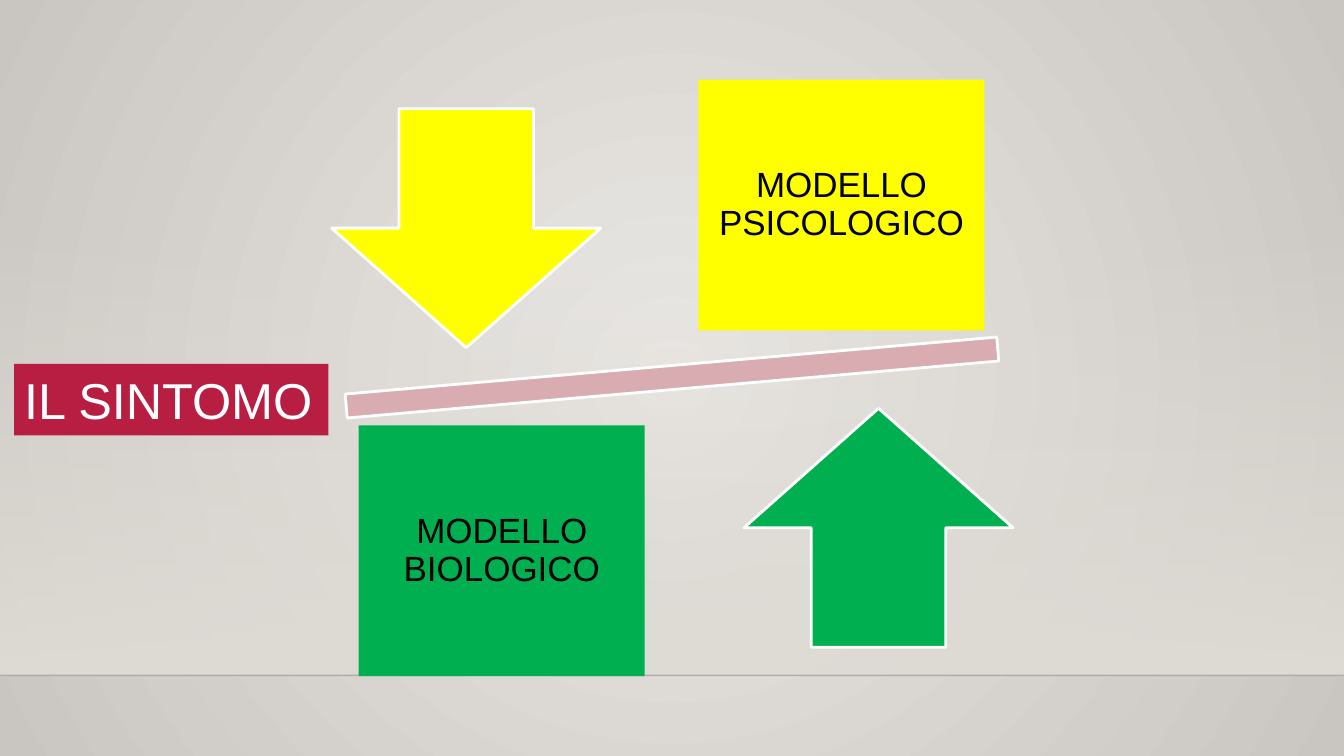
import pptx
import pptx.dml.color
import pptx.enum.shapes
import pptx.enum.text
import pptx.oxml.ns
import pptx.util
from lxml import etree

Cm = pptx.util.Cm
Pt = pptx.util.Pt
RGBColor = pptx.dml.color.RGBColor
Kind = pptx.enum.shapes.MSO_SHAPE
Align = pptx.enum.text.PP_ALIGN
qn = pptx.oxml.ns.qn

BLACK = RGBColor(0x00, 0x00, 0x00)
WHITE = RGBColor(0xFF, 0xFF, 0xFF)
YELLOW = RGBColor(0xFF, 0xFF, 0x00)
GREEN = RGBColor(0x00, 0xB0, 0x50)
RED = RGBColor(0xB7, 0x1E, 0x42)
PINK = RGBColor(0xD8, 0xAC, 0xB0)
LIGHT = RGBColor(0xEB, 0xE9, 0xE6)
DARK = RGBColor(0xC9, 0xC5, 0xC0)
SAND = RGBColor(0xDF, 0xDB, 0xD5)

WIDE, HIGH = Cm(33.87), Cm(19.05)
FLOOR = Cm(17.02)

deck = pptx.Presentation()
deck.slide_width, deck.slide_height = WIDE, HIGH
slide = deck.slides.add_slide(deck.slide_layouts[6])


def add_form(kind, left, top, width, height, fill=None, line=None):
    form = slide.shapes.add_shape(kind, left, top, width, height)
    form.shadow.inherit = False
    if fill is not None:
        form.fill.solid()
        form.fill.fore_color.rgb = fill
    if line is None:
        form.line.fill.background()
    else:
        form.line.color.rgb = line
        form.line.width = Pt(2)
    return form


def put_text(form, text, size, color, align, inset=None, wrap=True, space=1.0):
    frame = form.text_frame
    frame.word_wrap = wrap
    frame.vertical_anchor = pptx.enum.text.MSO_ANCHOR.MIDDLE
    if inset is not None:
        frame.margin_left = frame.margin_right = inset
        frame.margin_top = frame.margin_bottom = inset
    para = frame.paragraphs[0]
    para.text = text
    para.alignment = align
    para.line_spacing = space
    para.font.name = "Arial"
    para.font.size = Pt(size)
    para.font.color.rgb = color


# Backdrop: round glow, wall and floor line
glow = slide.background.fill
glow.gradient()
for stop, color in zip(glow.gradient_stops, (LIGHT, DARK)):
    stop.color.rgb = color
grad = slide.element.find(".//" + qn("a:gradFill"))
grad.remove(grad.find(qn("a:lin")))
ring = etree.SubElement(grad, qn("a:path"), path="circle")
etree.SubElement(ring, qn("a:fillToRect"), l="50000", t="50000", r="50000", b="50000")

wall_top = Cm(5.61)
wall = add_form(Kind.RECTANGLE, 0, wall_top, WIDE, FLOOR - wall_top)
wall.fill.gradient()
wall.fill.gradient_angle = 270
for stop in wall.fill.gradient_stops:
    stop.color.rgb = SAND
clear = wall.element.find(".//" + qn("a:srgbClr"))
etree.SubElement(clear, qn("a:alpha"), val="0")

edge = slide.shapes.add_connector(
    pptx.enum.shapes.MSO_CONNECTOR.STRAIGHT, 0, FLOOR, WIDE, FLOOR)
edge.line.color.rgb = BLACK
edge.line.width = Pt(1)
faint = edge.element.find(".//" + qn("a:srgbClr"))
etree.SubElement(faint, qn("a:alpha"), val="20000")
etree.SubElement(edge.element.spPr, qn("a:effectLst"))

# Seesaw with its two arrows and two models
beam = add_form(Kind.MATH_MINUS, Cm(5.72), Cm(8.23), Cm(22.43), Cm(2.57), PINK, WHITE)
beam.rotation = 355

for kind, left, top, color in (
    (Kind.DOWN_ARROW, 8.36, 2.74, YELLOW),
    (Kind.UP_ARROW, 18.75, 10.29, GREEN),
):
    add_form(kind, Cm(left), Cm(top), Cm(6.78), Cm(6.02), color, WHITE)

for text, left, top, color in (
    ("MODELLO PSICOLOGICO", 17.6, 2.01, YELLOW),
    ("MODELLO BIOLOGICO", 9.04, 10.72, GREEN),
):
    model = add_form(Kind.RECTANGLE, Cm(left), Cm(top), Cm(7.21), Cm(6.32), color)
    put_text(model, text, 25, BLACK, Align.CENTER, inset=Cm(0.48), space=0.9)

label = add_form(Kind.RECTANGLE, Cm(0.36), Cm(9.17), Cm(7.92), Cm(1.8), RED)
put_text(label, "IL SINTOMO", 36, WHITE, Align.LEFT, wrap=False)

deck.save("out.pptx")
